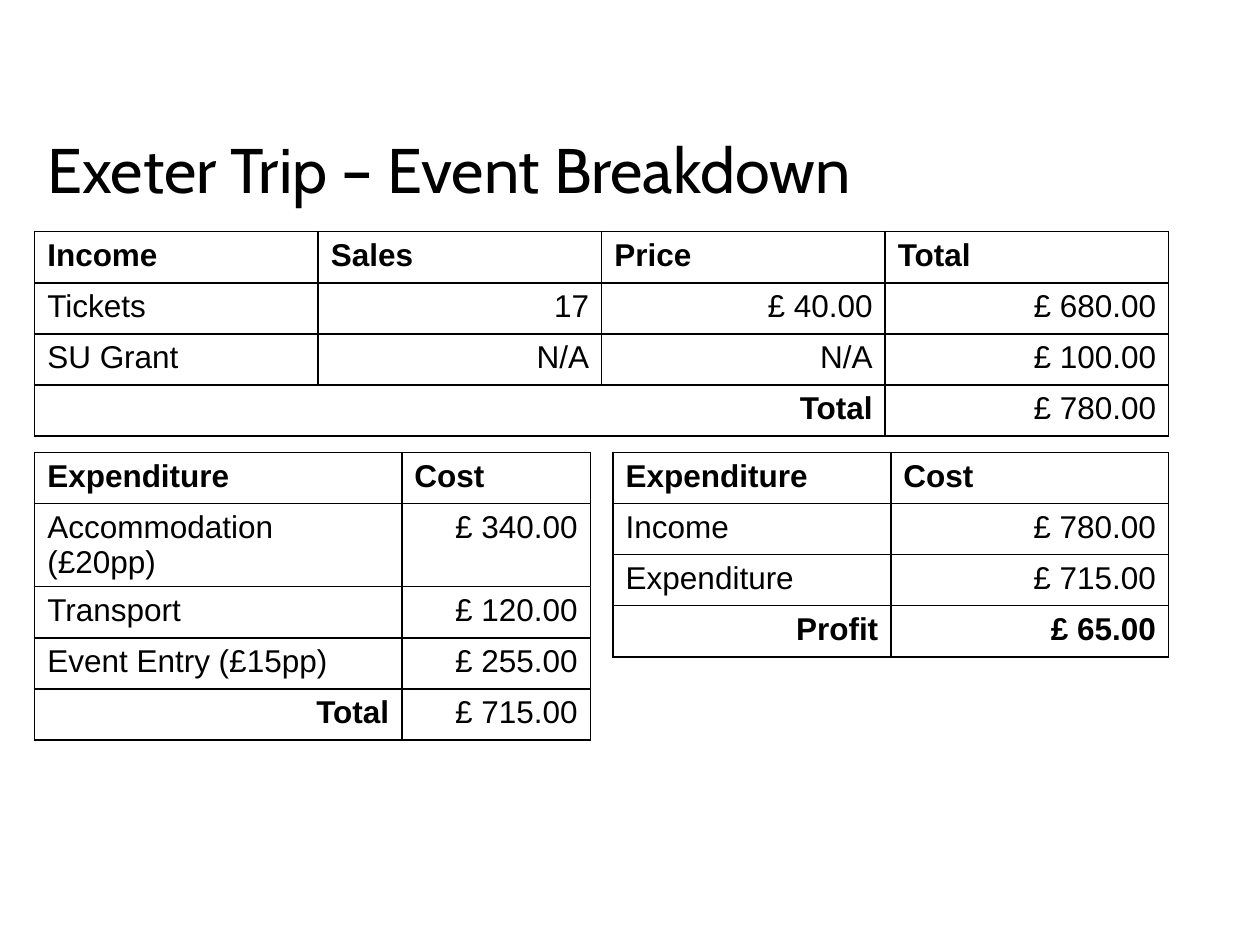
import pptx
import pptx.util
import pptx.oxml
import pptx.oxml.ns
import pptx.dml.color
import pptx.enum.text
from pptx.util import Cm

COLOURS = {"ink": "000000", "paper": "FFFFFF"}
TITLE = "Exeter Trip – Event Breakdown"
TITLE_FORMAT = {"name": "Cabin", "size": pptx.util.Pt(36), "bold": False}
CELL_FORMAT = {"name": "Arial", "size": pptx.util.Pt(18)}

# Content: first row is the header, last row the total
INCOME = [
    ("Income", "Sales", "Price", "Total"),
    ("Tickets", "17", "£ 40.00", "£ 680.00"),
    ("SU Grant", "N/A", "N/A", "£ 100.00"),
    ("Total", "", "", "£ 780.00"),
]
EXPENDITURE = [
    ("Expenditure", "Cost"),
    ("Accommodation (£20pp)", "£ 340.00"),
    ("Transport", "£ 120.00"),
    ("Event Entry (£15pp)", "£ 255.00"),
    ("Total", "£ 715.00"),
]
PROFIT = [
    ("Expenditure", "Cost"),
    ("Income", "£ 780.00"),
    ("Expenditure", "£ 715.00"),
    ("Profit", "£ 65.00"),
]

# Layout in centimetres
LEFT, WIDTH, GAP, ROW_HEIGHT = 0.7, 22.86, 0.46, 1.03
HALF = (WIDTH - GAP) / 2
COST_WIDTH = 3.8
INCOME_TOP, LOWER_TOP = 4.67, 9.12
TABLES = [
    {"rows": INCOME, "left": LEFT, "top": INCOME_TOP, "widths": [WIDTH / 4] * 4},
    {"rows": EXPENDITURE, "left": LEFT, "top": LOWER_TOP,
     "widths": [HALF - COST_WIDTH, COST_WIDTH]},
    {"rows": PROFIT, "left": LEFT + HALF + GAP, "top": LOWER_TOP,
     "widths": [HALF / 2] * 2, "bold_result": True},
]


def colour(name):
    return pptx.dml.color.RGBColor.from_string(COLOURS[name])


def format_font(font, values):
    for name, value in values.items():
        setattr(font, name, value)
    font.color.rgb = colour("ink")


def add_borders(cell):
    properties = cell._tc.get_or_add_tcPr()
    for index, side in enumerate(("lnL", "lnR", "lnT", "lnB")):
        line = pptx.oxml.parse_xml(
            f'<a:{side} {pptx.oxml.ns.nsdecls("a")} w="12700"><a:solidFill>'
            f'<a:srgbClr val="{COLOURS["ink"]}"/></a:solidFill></a:{side}>')
        properties.insert(index, line)


def fill_cell(cell, text, bold, right):
    cell.fill.background()
    add_borders(cell)
    paragraph = cell.text_frame.paragraphs[0]
    if right:
        paragraph.alignment = pptx.enum.text.PP_ALIGN.RIGHT
    format_font(paragraph.font, CELL_FORMAT)
    if text:
        run = paragraph.add_run()
        run.text = text
        format_font(run.font, {**CELL_FORMAT, "bold": bold})


def add_table(slide, rows, left, top, widths, bold_result=False):
    table = slide.shapes.add_table(
        len(rows), len(widths), Cm(left), Cm(top),
        Cm(sum(widths)), Cm(ROW_HEIGHT * len(rows))).table
    table.first_row = table.horz_banding = False
    for column, width in zip(table.columns, widths):
        column.width = Cm(width)
    last_row, last_column = len(rows) - 1, len(widths) - 1
    for row_index, row in enumerate(rows):
        table.rows[row_index].height = Cm(ROW_HEIGHT)
        header, total = row_index == 0, row_index == last_row
        for column_index, text in enumerate(row):
            bold = header or total and (column_index < last_column or bold_result)
            right = total or not header and column_index > 0
            fill_cell(table.cell(row_index, column_index), text, bold, right)
    # The total label spans every column before the amount
    if last_column > 1:
        table.cell(last_row, 0).merge(table.cell(last_row, last_column - 1))


def main():
    presentation = pptx.Presentation()
    presentation.slide_width, presentation.slide_height = Cm(25.4), Cm(19.05)
    slide = presentation.slides.add_slide(presentation.slide_layouts[5])
    slide.background.fill.solid()
    slide.background.fill.fore_color.rgb = colour("paper")

    # Title
    title = slide.shapes.title
    title.left, title.top, title.width, title.height = (
        Cm(LEFT), Cm(2.51), Cm(WIDTH), Cm(3.18))
    title.text_frame.text = TITLE
    title.text_frame.vertical_anchor = pptx.enum.text.MSO_ANCHOR.TOP
    paragraph = title.text_frame.paragraphs[0]
    paragraph.alignment = pptx.enum.text.PP_ALIGN.LEFT
    format_font(paragraph.runs[0].font, TITLE_FORMAT)

    # Tables
    for table in TABLES:
        add_table(slide, **table)

    presentation.save("out.pptx")


if __name__ == "__main__":
    main()
